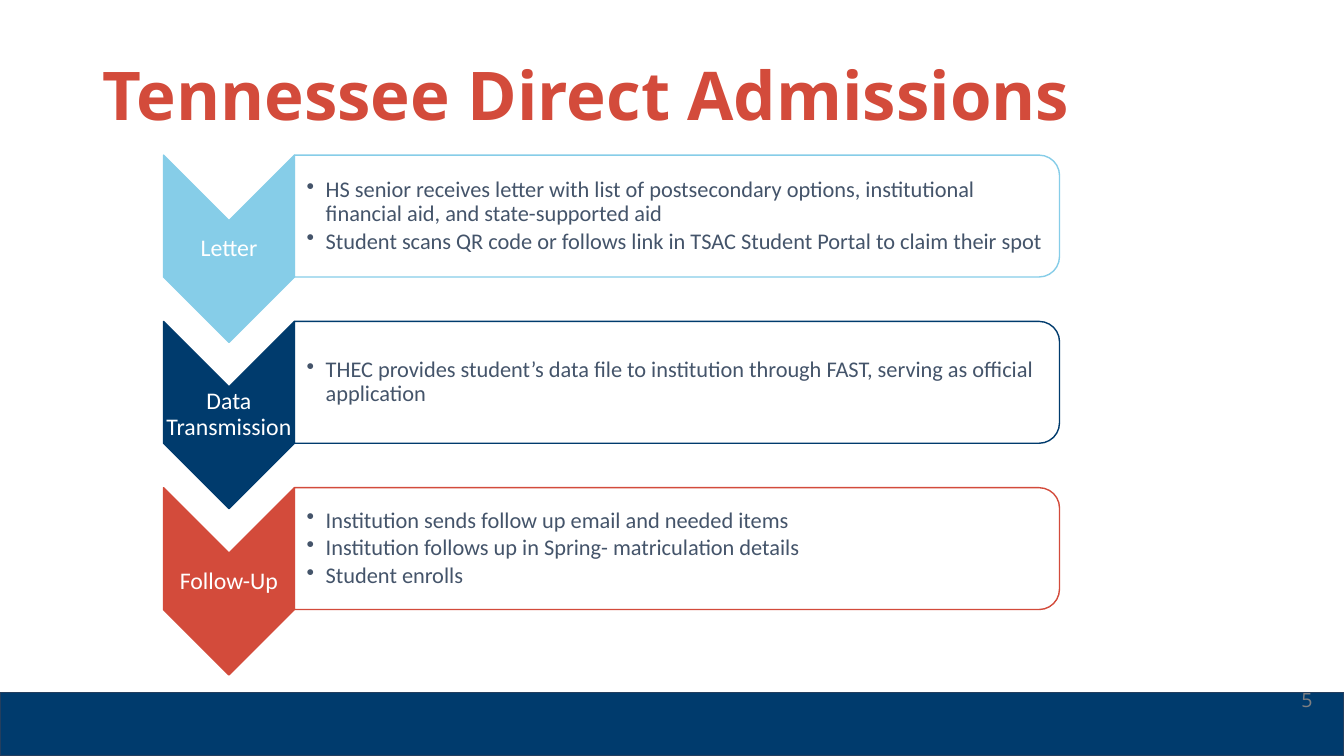
from lxml import etree
from pptx import Presentation
from pptx.dml.color import RGBColor
from pptx.enum.shapes import MSO_SHAPE
from pptx.enum.text import MSO_ANCHOR, PP_ALIGN
from pptx.oxml.ns import qn
from pptx.util import Cm, Pt

RECTANGLE = MSO_SHAPE.RECTANGLE
CHEVRON = MSO_SHAPE.CHEVRON
PANEL = MSO_SHAPE.ROUND_2_SAME_RECTANGLE
TOP, MIDDLE = MSO_ANCHOR.TOP, MSO_ANCHOR.MIDDLE
LEFT, CENTER, RIGHT = PP_ALIGN.LEFT, PP_ALIGN.CENTER, PP_ALIGN.RIGHT

WHITE = RGBColor(0xFF, 0xFF, 0xFF)
SKY = RGBColor(0x86, 0xCD, 0xE8)
NAVY = RGBColor(0x00, 0x3B, 0x6D)
RED = RGBColor(0xD3, 0x4B, 0x3B)
FOOTER_LINE = RGBColor(0x23, 0x3E, 0x5E)
SLATE = RGBColor(0x44, 0x54, 0x6A)
GRAY = RGBColor(0x7F, 0x7F, 0x82)

TITLE = "Tennessee Direct Admissions"
PAGE_NUMBER = "5"
STEPS = [
    ("Letter", SKY, [
        "HS senior receives letter with list of postsecondary options, "
        "institutional financial aid, and state-supported aid",
        "Student scans QR code or follows link in TSAC Student Portal to claim their spot",
    ]),
    ("Data Transmission", NAVY, [
        "THEC provides student’s data file to institution through FAST, "
        "serving as official application",
    ]),
    ("Follow-Up", RED, [
        "Institution sends follow up email and needed items",
        "Institution follows up in Spring- matriculation details",
        "Student enrolls",
    ]),
]

SLIDE_WIDTH, SLIDE_HEIGHT = 33.87, 19.05
FOOTER_HEIGHT = 1.6
STEP_LEFT, STEP_TOP, STEP_PITCH = 4.12, 3.91, 4.19
CHEVRON_WIDTH, CHEVRON_HEIGHT = 3.3, 4.72
PANEL_WIDTH, PANEL_HEIGHT = 19.28, 3.07
LABEL_HEIGHT = 1.42
BODY_WIDTH, BODY_HEIGHT = 19.13, 2.77
BULLET_INDENT = 0.48
TIGHT_INSETS = (0.02, 0.02, 0.02, 0.02)
BODY_INSETS = (0.31, 0.02, 0.02, 0.02)
DEFAULT_INSETS = (0.25, 0.13, 0.25, 0.13)


def add_block(slide, kind, left, top, width, height, fill, line):
    shape = slide.shapes.add_shape(kind, Cm(left), Cm(top), Cm(width), Cm(height))
    shape.shadow.inherit = False
    shape.fill.solid()
    shape.fill.fore_color.rgb = fill
    shape.line.color.rgb = line
    shape.line.width = Pt(1)
    return shape


def add_turned_block(slide, kind, left, top, width, height, fill, line):
    shift = (width - height) / 2
    shape = add_block(slide, kind, left + shift, top - shift, height, width, fill, line)
    shape.rotation = 90
    return shape


def add_bullet(paragraph):
    properties = paragraph._p.get_or_add_pPr()
    properties.set("marL", str(Cm(BULLET_INDENT)))
    properties.set("indent", str(-Cm(BULLET_INDENT)))
    etree.SubElement(properties, qn("a:buChar")).set("char", "•")


def add_text(slide, lines, box, font, size, color, align=LEFT, anchor=MIDDLE,
             insets=DEFAULT_INSETS, spacing=0.9, after=0, bold=False, bullets=False):
    frame = slide.shapes.add_textbox(*map(Cm, box)).text_frame
    frame.word_wrap = True
    frame.vertical_anchor = anchor
    frame.margin_left, frame.margin_top, frame.margin_right, frame.margin_bottom = map(Cm, insets)
    frame.text = "\n".join(lines)
    for paragraph in frame.paragraphs:
        if bullets:
            add_bullet(paragraph)
        paragraph.alignment = align
        paragraph.line_spacing = spacing
        paragraph.space_after = Pt(after)
        for run in paragraph.runs:
            run.font.name = font
            run.font.size = Pt(size)
            run.font.bold = bold
            run.font.color.rgb = color


def add_step(slide, index, label, color, points):
    top = STEP_TOP + index * STEP_PITCH
    panel_left = STEP_LEFT + CHEVRON_WIDTH
    add_turned_block(slide, CHEVRON, STEP_LEFT, top, CHEVRON_WIDTH, CHEVRON_HEIGHT, color, color)
    label_top = top + (CHEVRON_HEIGHT - LABEL_HEIGHT) / 2
    add_text(slide, [label], (STEP_LEFT, label_top, CHEVRON_WIDTH, LABEL_HEIGHT),
             "Calibri", 17, WHITE, align=CENTER, insets=TIGHT_INSETS, after=6)
    panel = add_turned_block(slide, PANEL, panel_left, top, PANEL_WIDTH, PANEL_HEIGHT, WHITE, color)
    panel_color = panel.fill._xPr.find(qn("a:solidFill"))[0]
    etree.SubElement(panel_color, qn("a:alpha")).set("val", "90000")
    body_top = top + (PANEL_HEIGHT - BODY_HEIGHT) / 2
    add_text(slide, points, (panel_left, body_top, BODY_WIDTH, BODY_HEIGHT),
             "Calibri", 16, SLATE, insets=BODY_INSETS, after=2.4, bullets=True)


def main():
    presentation = Presentation()
    presentation.slide_width = Cm(SLIDE_WIDTH)
    presentation.slide_height = Cm(SLIDE_HEIGHT)
    slide = presentation.slides.add_slide(presentation.slide_layouts[6])
    add_block(slide, RECTANGLE, 0, SLIDE_HEIGHT - FOOTER_HEIGHT, SLIDE_WIDTH, FOOTER_HEIGHT,
              NAVY, FOOTER_LINE)
    add_text(slide, [TITLE], (2.33, 0.64, 29.21, 3.68), "Open Sans", 48, RED, bold=True)
    add_text(slide, [PAGE_NUMBER], (31.55, 17.2, 1.78, 1.02), "Open Sans", 14, GRAY,
             align=RIGHT, anchor=TOP, spacing=1.0)
    for index, step in enumerate(STEPS):
        add_step(slide, index, *step)
    presentation.save("out.pptx")


if __name__ == "__main__":
    main()
